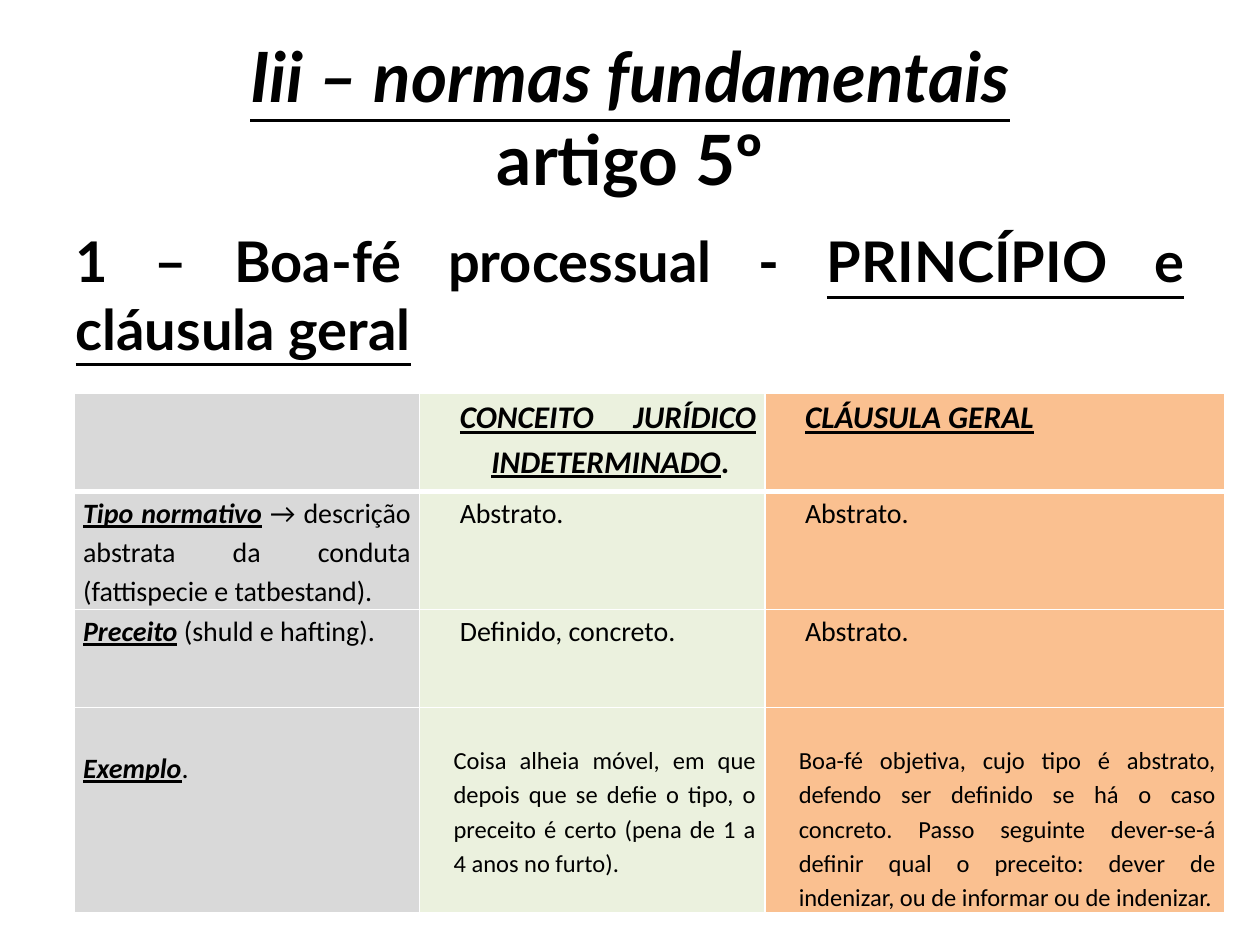
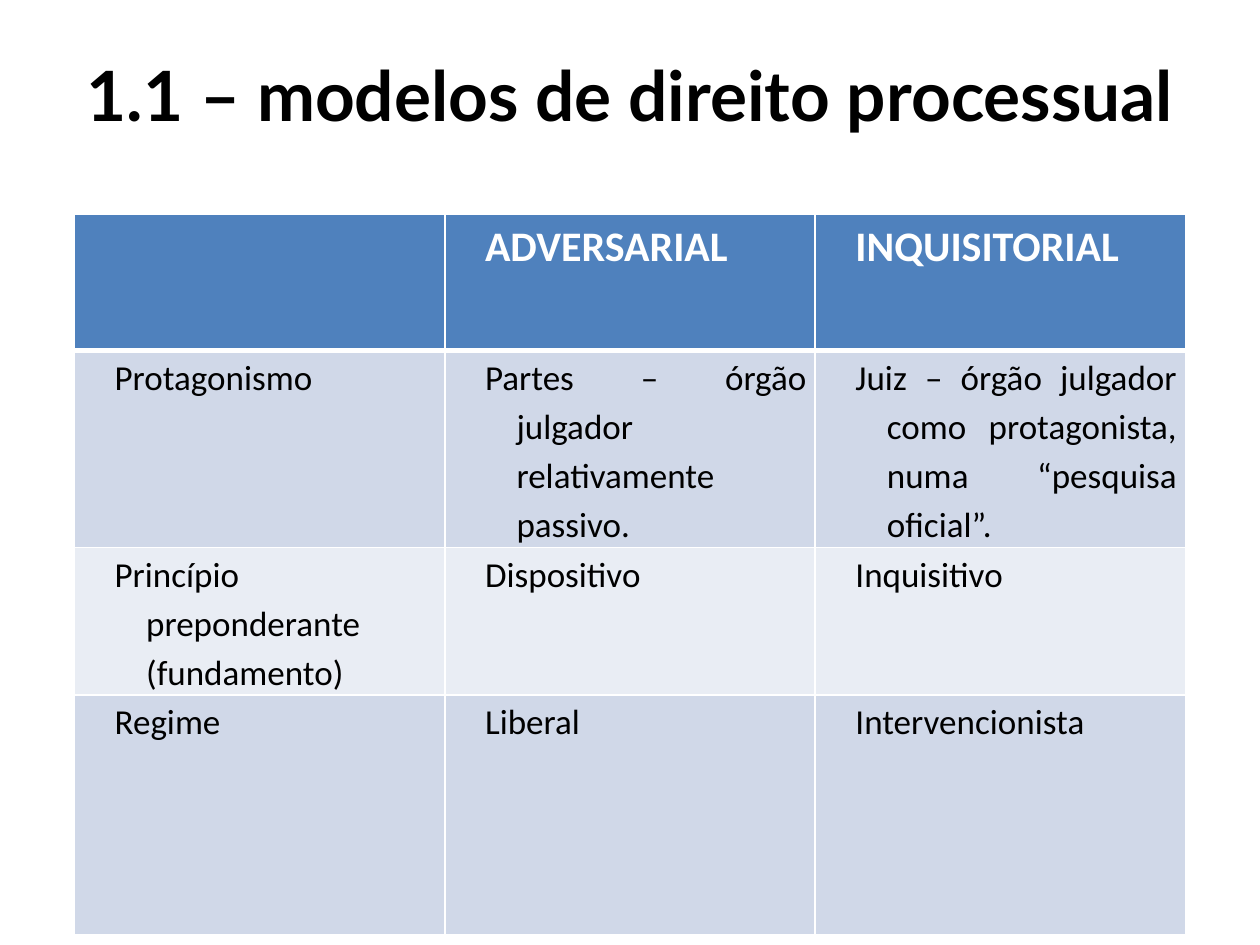
"""Builds two slides on procedural good faith and models of procedural law."""
from lxml.etree import SubElement
from pptx import Presentation
from pptx.dml.color import RGBColor
from pptx.enum.text import MSO_ANCHOR, MSO_AUTO_SIZE, PP_ALIGN
from pptx.oxml import parse_xml
from pptx.oxml.ns import qn
from pptx.util import Inches, Pt

BLACK, WHITE = "000000", "FFFFFF"
GREY, GREEN, ORANGE = "D9D9D9", "EBF1DE", "FAC090"
BLUE, BAND_DARK, BAND_LIGHT = "4F81BD", "D0D8E8", "E9EDF4"
HEAD_FONT, CELL_FONT = "Lato", "Calibri"
NS = "http://schemas.openxmlformats.org/drawingml/2006/main"

# Run styles: b = bold, i = italic, u = underlined
TITLE_1 = [("Iii – normas fundamentais", "biu"), ("\n", ""), ("artigo 5º", "b")]
TITLE_2 = [("1.1 – modelos de direito processual", "b")]
TOPIC = [("1 – Boa-fé processual - ", "b"), ("PRINCÍPIO e cláusula geral", "bu")]

HANGING = {"left": 0.5, "first": -0.25}
FLUSH = {"left": 0, "first": 0}
EXAMPLE = {"left": 0.2, "first": 0, "size": 14, "top": 0.27}

CLAUSES = [
    [([], FLUSH),
     ([("CONCEITO JURÍDICO INDETERMINADO", "biu"), (".", "b")], {**HANGING, "size": 18}),
     ([("CLÁUSULA GERAL", "biu")], {**HANGING, "size": 18})],
    [([("Tipo normativo", "biu"),
       (" → descrição abstrata da conduta (fattispecie e tatbestand).", "")], FLUSH),
     ([("Abstrato.", "")], HANGING),
     ([("Abstrato.", "")], HANGING)],
    [([("Preceito", "biu"), (" (shuld e hafting).", "")], FLUSH),
     ([("Definido, concreto.", "")], HANGING),
     ([("Abstrato.", "")], HANGING)],
    [([("Exemplo", "biu"), (".", "")], {**FLUSH, "top": 0.31}),
     ([("Coisa alheia móvel, em que depois que se defie o tipo, o preceito é certo "
        "(pena de 1 a 4 anos no furto).", "")], EXAMPLE),
     ([("Boa-fé objetiva, cujo tipo é abstrato, defendo ser definido se há o caso "
        "concreto. Passo seguinte dever-se-á definir qual o preceito: dever de "
        "indenizar, ou de informar ou de indenizar.", "")], EXAMPLE)],
]
MODELS = [
    ["", "ADVERSARIAL", "INQUISITORIAL"],
    ["Protagonismo", "Partes – órgão julgador relativamente passivo.",
     "Juiz – órgão julgador como protagonista, numa “pesquisa oficial”."],
    ["Princípio preponderante (fundamento)", "Dispositivo", "Inquisitivo"],
    ["Regime", "Liberal", "Intervencionista"],
]


def rgb(value):
    """Turn a hex string into a colour."""
    return RGBColor.from_string(value)


def add_runs(p, runs, size, font, color=BLACK):
    """Add styled runs to a paragraph."""
    for text, style in runs:
        if text == "\n":
            p.add_line_break()
            continue
        r = p.add_run()
        r.text = text
        f = r.font
        f.name, f.size = font, Pt(size)
        f.bold, f.italic, f.underline = ("b" in style, "i" in style, "u" in style)
        f.color.rgb = rgb(color)


def set_indent(p, left, first):
    """Set the left margin and first-line indent in inches."""
    pPr = p._p.get_or_add_pPr()
    pPr.set("marL", str(Inches(left)))
    pPr.set("indent", str(Inches(first)))
    return pPr


def fill_placeholder(sp, box, runs, size, align):
    """Place a placeholder and write its only paragraph."""
    sp.left, sp.top, sp.width, sp.height = map(Inches, box)
    tf = sp.text_frame
    tf.word_wrap = True
    tf.auto_size = MSO_AUTO_SIZE.NONE
    p = tf.paragraphs[0]
    p.alignment = align
    add_runs(p, runs, size, HEAD_FONT)
    return p


def add_title(s, top, height, runs):
    """Write the slide title."""
    fill_placeholder(s.shapes.title, (0.5, top, 9, height), runs, 39.6, PP_ALIGN.CENTER)
    s.shapes.title.text_frame.vertical_anchor = MSO_ANCHOR.MIDDLE


def set_borders(cell, top, bottom):
    """Draw white borders around a cell, with widths in points."""
    tcPr = cell._tc.get_or_add_tcPr()
    for i, (side, width) in enumerate(zip("LRTB", (1, 1, top, bottom))):
        tcPr.insert(i, parse_xml(
            f'<a:ln{side} xmlns:a="{NS}" w="{Pt(width)}"><a:solidFill>'
            f'<a:srgbClr val="{WHITE}"/></a:solidFill></a:ln{side}>'))


def fill_cell(cell, runs, fill, color=BLACK, size=16, left=0, first=0, top=0):
    """Fill a cell and write its justified text."""
    cell.fill.solid()
    cell.fill.fore_color.rgb = rgb(fill)
    cell.margin_left = cell.margin_right = Inches(0.07)
    cell.margin_top, cell.margin_bottom = Inches(top), 0
    p = cell.text_frame.paragraphs[0]
    p.alignment = PP_ALIGN.JUSTIFY
    p.line_spacing = 1.15
    set_indent(p, left, first)
    add_runs(p, runs, size, CELL_FONT, color)


def add_grid(s, top, widths, heights):
    """Add a bordered table with a thick rule under its header."""
    tbl = s.shapes.add_table(len(heights), len(widths), Inches(0.59), Inches(top),
                             Inches(sum(widths)), Inches(sum(heights))).table
    for col, width in zip(tbl.columns, widths):
        col.width = Inches(width)
    for i, (row, height) in enumerate(zip(tbl.rows, heights)):
        row.height = Inches(height)
        for cell in row.cells:
            set_borders(cell, 3 if i == 1 else 1, 3 if i == 0 else 1)
    return tbl


def build_clauses(prs):
    """Compare the indeterminate concept with the general clause."""
    s = prs.slides.add_slide(prs.slide_layouts[1])
    add_title(s, 0.3, 1.25, TITLE_1)
    p = fill_placeholder(s.placeholders[1], (0.5, 1.75, 9, 4.95), TOPIC, 32,
                         PP_ALIGN.JUSTIFY)
    SubElement(set_indent(p, 0, 0), qn("a:buNone"))
    tbl = add_grid(s, 3.12, [2.74, 2.74, 3.65], [0.78, 0.92, 0.78, 1.63])
    for i, row in enumerate(CLAUSES):
        for j, (runs, layout) in enumerate(row):
            fill_cell(tbl.cell(i, j), runs, (GREY, GREEN, ORANGE)[j], **layout)


def build_models(prs):
    """Compare the adversarial and inquisitorial models."""
    s = prs.slides.add_slide(prs.slide_layouts[5])
    add_title(s, 0.27, 0.95, TITLE_2)
    tbl = add_grid(s, 1.7, [2.94] * 3, [1.08, 1.37, 1.08, 1.9])
    for i, row in enumerate(MODELS):
        fill = BLUE if i == 0 else (BAND_LIGHT, BAND_DARK)[i % 2]
        color, size, style = (WHITE, 24, "b") if i == 0 else (BLACK, 20, "")
        for j, text in enumerate(row):
            runs = [(text, style)] if text else []
            fill_cell(tbl.cell(i, j), runs, fill, color, size, **HANGING)


def main():
    """Build and save the presentation."""
    prs = Presentation()
    prs.slide_width, prs.slide_height = Inches(10), Inches(7.5)
    build_clauses(prs)
    build_models(prs)
    prs.save("out.pptx")


if __name__ == "__main__":
    main()
